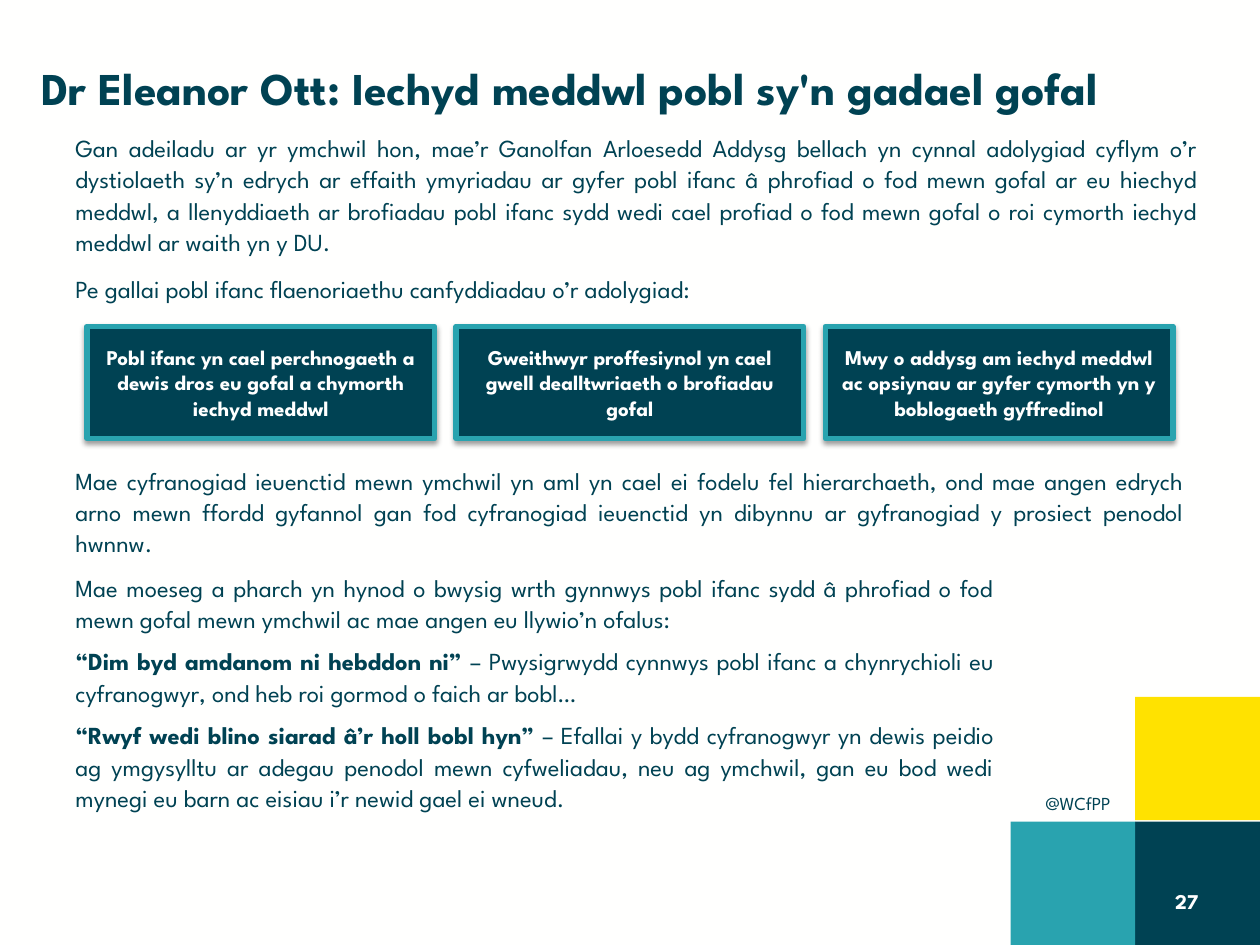
from lxml.etree import SubElement
from pptx import Presentation
from pptx.dml.color import RGBColor
from pptx.enum.shapes import MSO_SHAPE
from pptx.enum.text import MSO_ANCHOR, PP_ALIGN
from pptx.oxml.ns import qn
from pptx.util import Inches, Pt

FONT = "League Spartan"
COLORS = {
    "navy": "004253",
    "teal": "29A3AF",
    "yellow": "FFE200",
    "white": "FFFFFF",
    "paper": "FFFFFE",
    "shadow": "000000",
}

INTRODUCTION = [
    [("Gan adeiladu ar yr ymchwil hon, mae’r Ganolfan Arloesedd Addysg bellach yn cynnal "
      "adolygiad cyflym o’r dystiolaeth sy’n edrych ar effaith ymyriadau ar gyfer pobl ifanc "
      "â phrofiad o fod mewn gofal ar eu hiechyd meddwl, a llenyddiaeth ar brofiadau pobl "
      "ifanc sydd wedi cael profiad o fod mewn gofal o roi cymorth iechyd meddwl ar waith "
      "yn y DU.", False)],
    [("Pe gallai pobl ifanc flaenoriaethu canfyddiadau o’r adolygiad:", False)],
]
PRIORITIES = [
    "Pobl ifanc yn cael perchnogaeth a dewis dros eu gofal a chymorth iechyd meddwl",
    "Gweithwyr proffesiynol yn cael gwell dealltwriaeth o brofiadau gofal",
    "Mwy o addysg am iechyd meddwl ac opsiynau ar gyfer cymorth yn y boblogaeth gyffredinol",
]
PARTICIPATION = [
    [("Mae cyfranogiad ieuenctid mewn ymchwil yn aml yn cael ei fodelu fel hierarchaeth, ond "
      "mae angen edrych arno mewn ffordd gyfannol gan fod cyfranogiad ieuenctid yn dibynnu "
      "ar gyfranogiad y prosiect penodol hwnnw.", False)],
]
ETHICS = [
    [("Mae moeseg a pharch yn hynod o bwysig wrth gynnwys pobl ifanc sydd â phrofiad o fod "
      "mewn gofal mewn ymchwil ac mae angen eu llywio’n ofalus:", False)],
    [("“Dim byd amdanom ni hebddon ni” ", True),
     ("– Pwysigrwydd cynnwys pobl ifanc a chynrychioli eu cyfranogwyr, ond heb roi gormod "
      "o faich ar bobl…", False)],
    [("“Rwyf wedi blino siarad â’r holl bobl hyn”", True),
     (" – Efallai y bydd cyfranogwyr yn dewis peidio ag ymgysylltu ar adegau penodol mewn "
      "cyfweliadau, neu ag ymchwil, gan eu bod wedi mynegi eu barn ac eisiau i’r newid gael "
      "ei wneud.", False)],
]


def color(name):
    return RGBColor.from_string(COLORS[name])


def format_font(font, size, color_name, bold=False):
    font.name = FONT
    font.size = Pt(size)
    font.bold = bold
    font.color.rgb = color(color_name)


def set_label(shape, text, size, color_name, bold=False, align=PP_ALIGN.LEFT,
              anchor=MSO_ANCHOR.MIDDLE):
    text_frame = shape.text_frame
    text_frame.word_wrap = True
    text_frame.vertical_anchor = anchor
    text_frame.text = text
    paragraph = text_frame.paragraphs[0]
    paragraph.alignment = align
    format_font(paragraph.runs[0].font, size, color_name, bold)


def add_textbox(slide, left, top, width, height):
    return slide.shapes.add_textbox(Inches(left), Inches(top), Inches(width), Inches(height))


def add_rectangle(slide, left, top, width, height, fill_name):
    shape = slide.shapes.add_shape(MSO_SHAPE.RECTANGLE, Inches(left), Inches(top),
                                   Inches(width), Inches(height))
    shape.shadow.inherit = False
    shape.fill.solid()
    shape.fill.fore_color.rgb = color(fill_name)
    shape.line.fill.background()
    return shape


def add_soft_shadow(shape):
    effects = shape._element.spPr.find(qn("a:effectLst"))
    shadow = SubElement(effects, qn("a:outerShdw"), blurRad=str(Pt(3.1)), dist=str(Pt(1.6)),
                        dir="5400000", rotWithShape="0")
    shade = SubElement(shadow, qn("a:srgbClr"), val=COLORS["shadow"])
    SubElement(shade, qn("a:alpha"), val="38000")


def add_priority_box(slide, left, text):
    shape = add_rectangle(slide, left, 2.59, 2.76, 0.89, "navy")
    shape.line.color.rgb = color("teal")
    shape.line.width = Pt(3)
    add_soft_shadow(shape)
    set_label(shape, text, 12, "white", bold=True, align=PP_ALIGN.CENTER)


def add_body_text(slide, left, top, width, height, paragraphs, space_before=0):
    text_frame = add_textbox(slide, left, top, width, height).text_frame
    text_frame.word_wrap = True
    for index, parts in enumerate(paragraphs):
        paragraph = text_frame.add_paragraph() if index else text_frame.paragraphs[0]
        paragraph.alignment = PP_ALIGN.JUSTIFY
        paragraph.line_spacing = 1.07
        paragraph.space_before = Pt(space_before if index else 0)
        paragraph.space_after = Pt(6)
        for text, bold in parts:
            run = paragraph.add_run()
            run.text = text
            format_font(run.font, 14, "navy", bold)


def main():
    presentation = Presentation()
    presentation.slide_width = Inches(10)
    presentation.slide_height = Inches(7.5)
    slide = presentation.slides.add_slide(presentation.slide_layouts[6])
    slide.background.fill.solid()
    slide.background.fill.fore_color.rgb = color("paper")

    # Corner squares and handle
    for left, top, fill_name in [(9.01, 6.52, "navy"), (9.01, 5.53, "yellow"),
                                 (8.02, 6.52, "teal")]:
        add_rectangle(slide, left, top, 0.99, 0.98, fill_name)
    set_label(add_textbox(slide, 8.2, 6.24, 0.81, 0.29), "@WCfPP", 10.5, "navy",
              anchor=MSO_ANCHOR.TOP)

    # Title and introduction
    set_label(add_textbox(slide, 0.23, 0.07, 9.66, 1.25),
              "Dr Eleanor Ott: Iechyd meddwl pobl sy'n gadael gofal", 26, "navy", bold=True)
    add_body_text(slide, 0.5, 0.99, 9.11, 5.58, INTRODUCTION, space_before=2.8)

    # Page number
    set_label(add_textbox(slide, 7.28, 6.95, 2.33, 0.4), "27", 12, "white", bold=True,
              align=PP_ALIGN.RIGHT)

    # Row of priorities
    for index, text in enumerate(PRIORITIES):
        add_priority_box(slide, 0.69 + 2.93 * index, text)

    # Participation and ethics
    add_body_text(slide, 0.5, 3.63, 9, 0.84, PARTICIPATION)
    add_body_text(slide, 0.5, 4.48, 7.49, 2.35, ETHICS, space_before=0.2)

    presentation.save("out.pptx")


if __name__ == "__main__":
    main()
